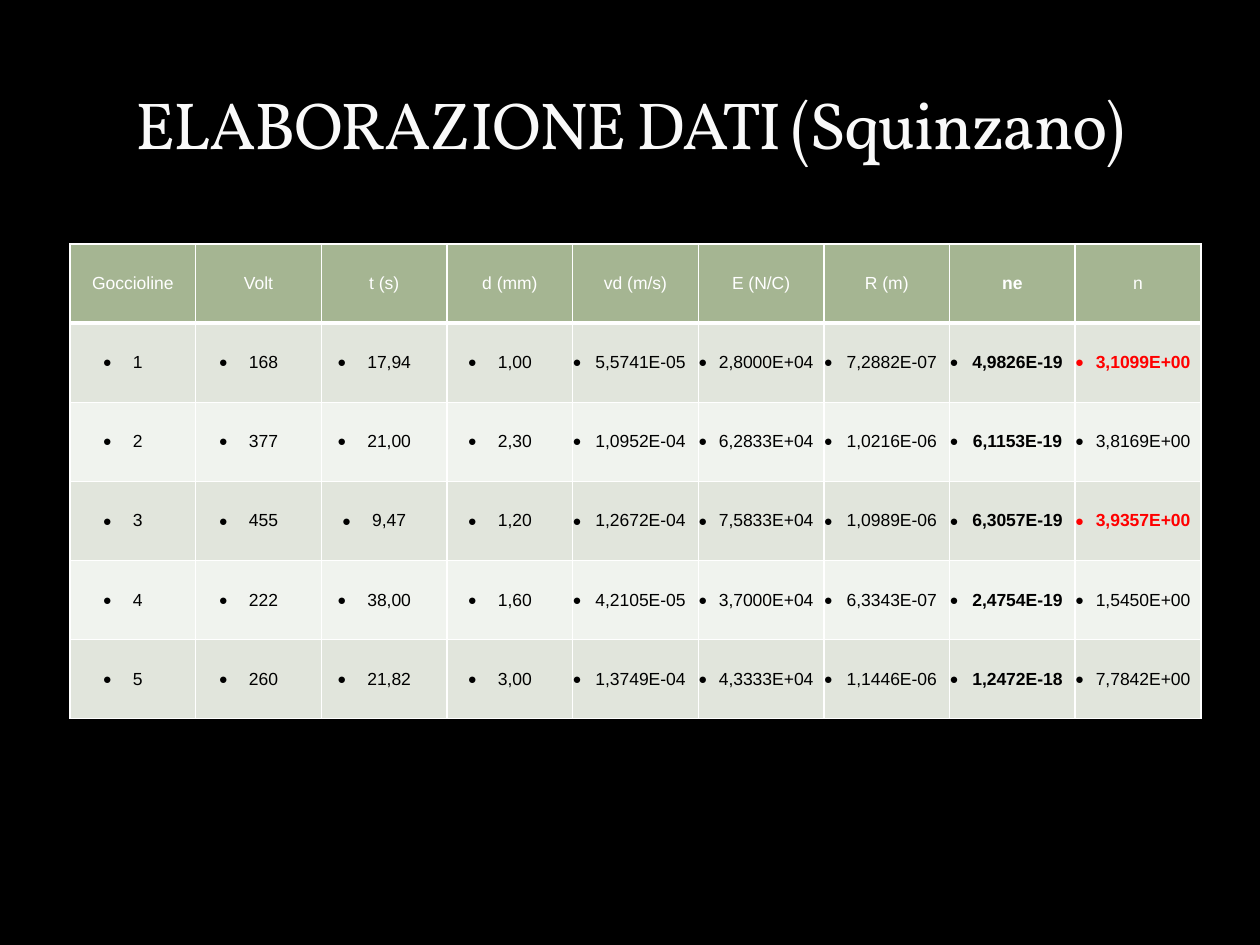
from dataclasses import dataclass

import pptx
import pptx.dml.color
import pptx.enum.text
import pptx.oxml
import pptx.oxml.ns
import pptx.util

PX = 914400 // 126
CENTER = pptx.enum.text.PP_ALIGN.CENTER
MIDDLE = pptx.enum.text.MSO_ANCHOR.MIDDLE
BOTTOM = pptx.enum.text.MSO_ANCHOR.BOTTOM

HEADERS = ["Goccioline", "Volt", "t (s)", "d (mm)", "vd (m/s)", "E (N/C)", "R (m)", "ne", "n"]
DROPLETS = [
    ["1", "168", "17,94", "1,00", "5,5741E-05", "2,8000E+04", "7,2882E-07", "4,9826E-19", "3,1099E+00"],
    ["2", "377", "21,00", "2,30", "1,0952E-04", "6,2833E+04", "1,0216E-06", "6,1153E-19", "3,8169E+00"],
    ["3", "455", "9,47", "1,20", "1,2672E-04", "7,5833E+04", "1,0989E-06", "6,3057E-19", "3,9357E+00"],
    ["4", "222", "38,00", "1,60", "4,2105E-05", "3,7000E+04", "6,3343E-07", "2,4754E-19", "1,5450E+00"],
    ["5", "260", "21,82", "3,00", "1,3749E-04", "4,3333E+04", "1,1446E-06", "1,2472E-18", "7,7842E+00"],
]
BOLD_COLUMN = HEADERS.index("ne")
HIGHLIGHTS = {"3,1099E+00", "3,9357E+00"}


@dataclass(frozen=True)
class Theme:
    background: str = "000000"
    title: str = "F9F9F9"
    border: str = "FFFFFF"
    header_fill: str = "A5B592"
    header_text: str = "FFFFFF"
    odd_fill: str = "E1E5DC"
    even_fill: str = "F0F3EE"
    text: str = "000000"
    highlight: str = "FF0000"
    title_font: str = "Vollkorn"
    table_font: str = "Arial"
    title_size: int = 38
    table_size: int = 10


def rgb(value):
    return pptx.dml.color.RGBColor.from_string(value)


def append_xml(parent, tag, content="", **attributes):
    listed = "".join(f' {name}="{value}"' for name, value in attributes.items())
    namespace = pptx.oxml.ns.nsdecls("a")
    parent.append(pptx.oxml.parse_xml(f"<a:{tag} {namespace}{listed}>{content}</a:{tag}>"))


class SlideBuilder:
    def __init__(self, slide, theme):
        self.slide = slide
        self.theme = theme
        slide.background.fill.solid()
        slide.background.fill.fore_color.rgb = rgb(theme.background)

    def style_font(self, font, name, size, color, bold=False):
        font.name = name
        font.size = pptx.util.Pt(size)
        font.bold = bold
        font.color.rgb = rgb(color)

    def title(self, text, left, top, width, height):
        shape = self.slide.shapes.title
        shape.left, shape.top, shape.width, shape.height = (
            value * PX for value in (left, top, width, height))
        frame = shape.text_frame
        frame.text = text
        frame.vertical_anchor = BOTTOM
        paragraph = frame.paragraphs[0]
        paragraph.alignment = CENTER
        font = paragraph.runs[0].font
        self.style_font(font, self.theme.title_font, self.theme.title_size, self.theme.title)
        paragraph.runs[0]._r.get_or_add_rPr().set("spc", "-100")

    def borders(self, cell, top=1, bottom=1):
        fill = f'<a:solidFill><a:srgbClr val="{self.theme.border}"/></a:solidFill>'
        properties = cell._tc.get_or_add_tcPr()
        for tag, points in (("lnL", 1), ("lnR", 1), ("lnT", top), ("lnB", bottom)):
            append_xml(properties, tag, fill, w=pptx.util.Pt(points))

    def bullet(self, paragraph):
        properties = paragraph._p.get_or_add_pPr()
        properties.set("marL", str(10 * PX))
        properties.set("indent", str(-30 * PX))
        append_xml(properties, "buSzPct", val=85000)
        append_xml(properties, "buFont", typeface=self.theme.table_font)
        append_xml(properties, "buChar", char="●")

    def cell(self, cell, text, fill, color, bold, bulleted):
        cell.margin_left = cell.margin_right = cell.margin_top = cell.margin_bottom = 0
        cell.vertical_anchor = MIDDLE
        cell.fill.solid()
        cell.fill.fore_color.rgb = rgb(fill)
        cell.text = text
        paragraph = cell.text_frame.paragraphs[0]
        paragraph.alignment = CENTER
        if bulleted:
            self.bullet(paragraph)
        font = paragraph.runs[0].font
        self.style_font(font, self.theme.table_font, self.theme.table_size, color, bold)

    def table(self, rows, left, top, width, height):
        theme = self.theme
        table = self.slide.shapes.add_table(
            len(rows), len(rows[0]), left * PX, top * PX, width * PX, height * PX).table
        table.horz_banding = False
        for row, values in enumerate(rows):
            header = row == 0
            band = theme.odd_fill if row % 2 else theme.even_fill
            for column, text in enumerate(values):
                highlighted = text in HIGHLIGHTS
                color = theme.highlight if highlighted else theme.text
                cell = table.cell(row, column)
                self.borders(cell, top=3 if row == 1 else 1, bottom=3 if header else 1)
                self.cell(cell, text,
                          fill=theme.header_fill if header else band,
                          color=theme.header_text if header else color,
                          bold=highlighted or column == BOLD_COLUMN,
                          bulleted=not header)


def main():
    presentation = pptx.Presentation()
    presentation.slide_width = pptx.util.Inches(10)
    presentation.slide_height = pptx.util.Inches(7.5)
    slide = presentation.slides.add_slide(presentation.slide_layouts[5])
    builder = SlideBuilder(slide, Theme())
    builder.title("ELABORAZIONE DATI (Squinzano)", 63, 39, 1134, 130)
    builder.table([HEADERS, *DROPLETS], 70, 244, 1131, 475)
    presentation.save("out.pptx")


if __name__ == "__main__":
    main()
